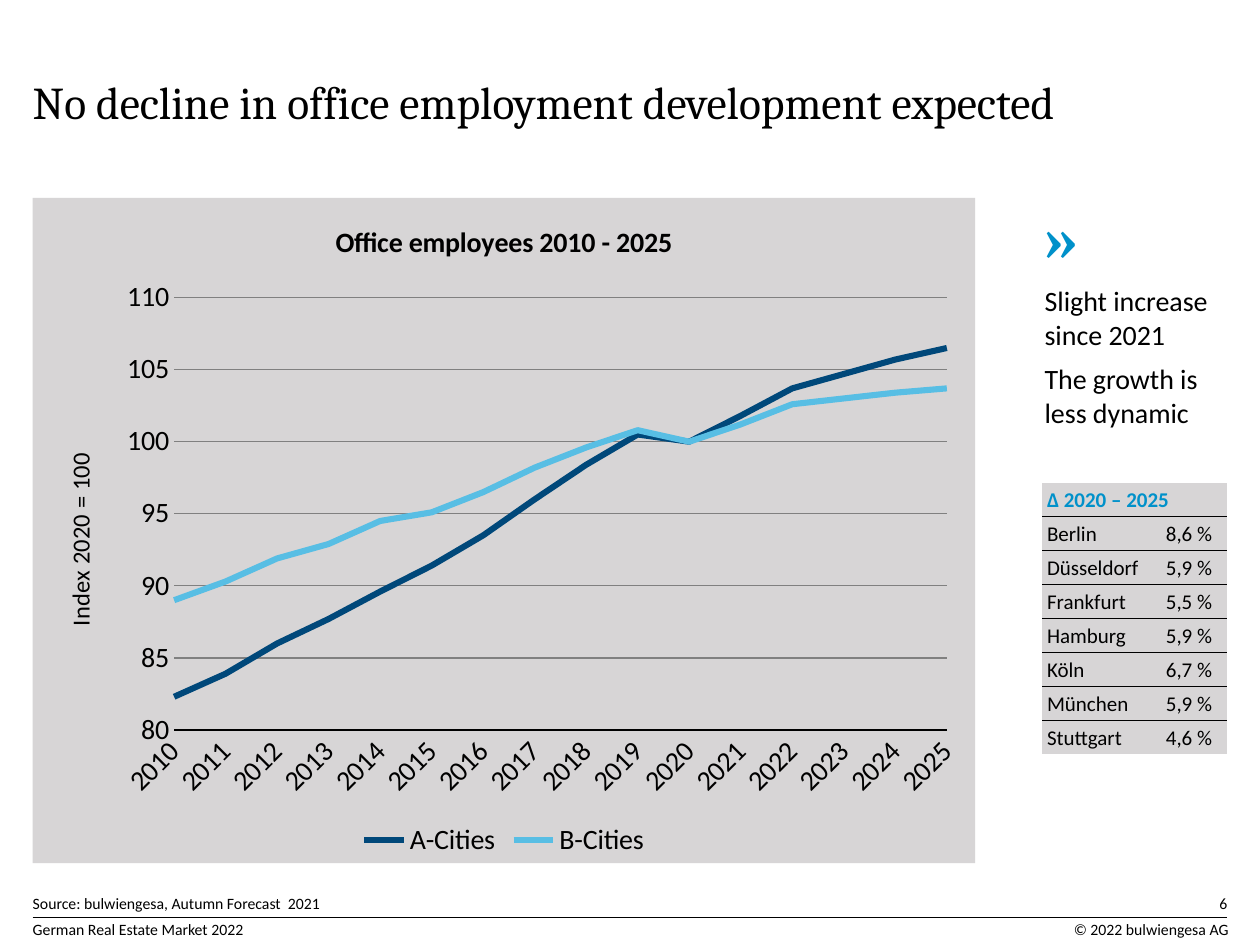
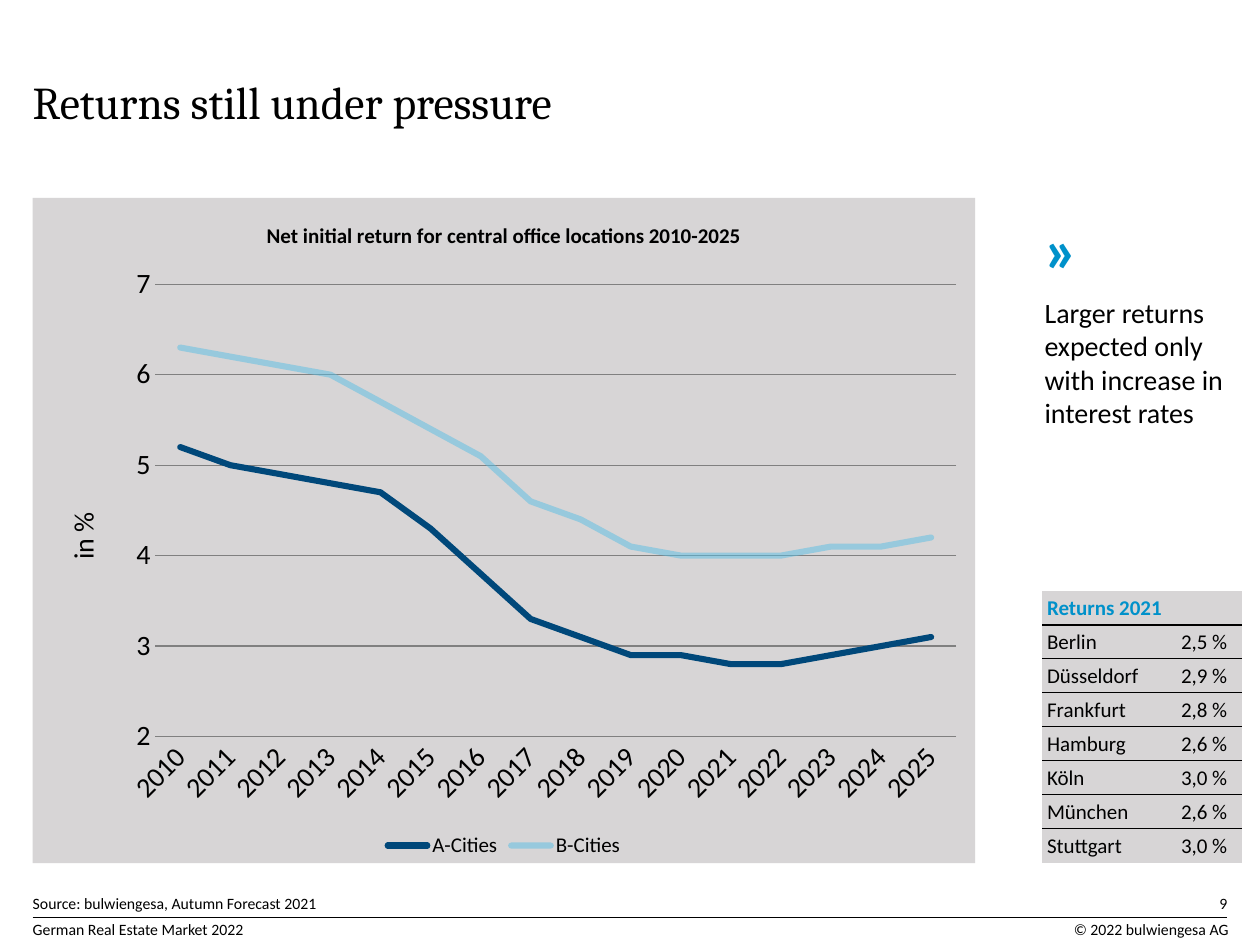
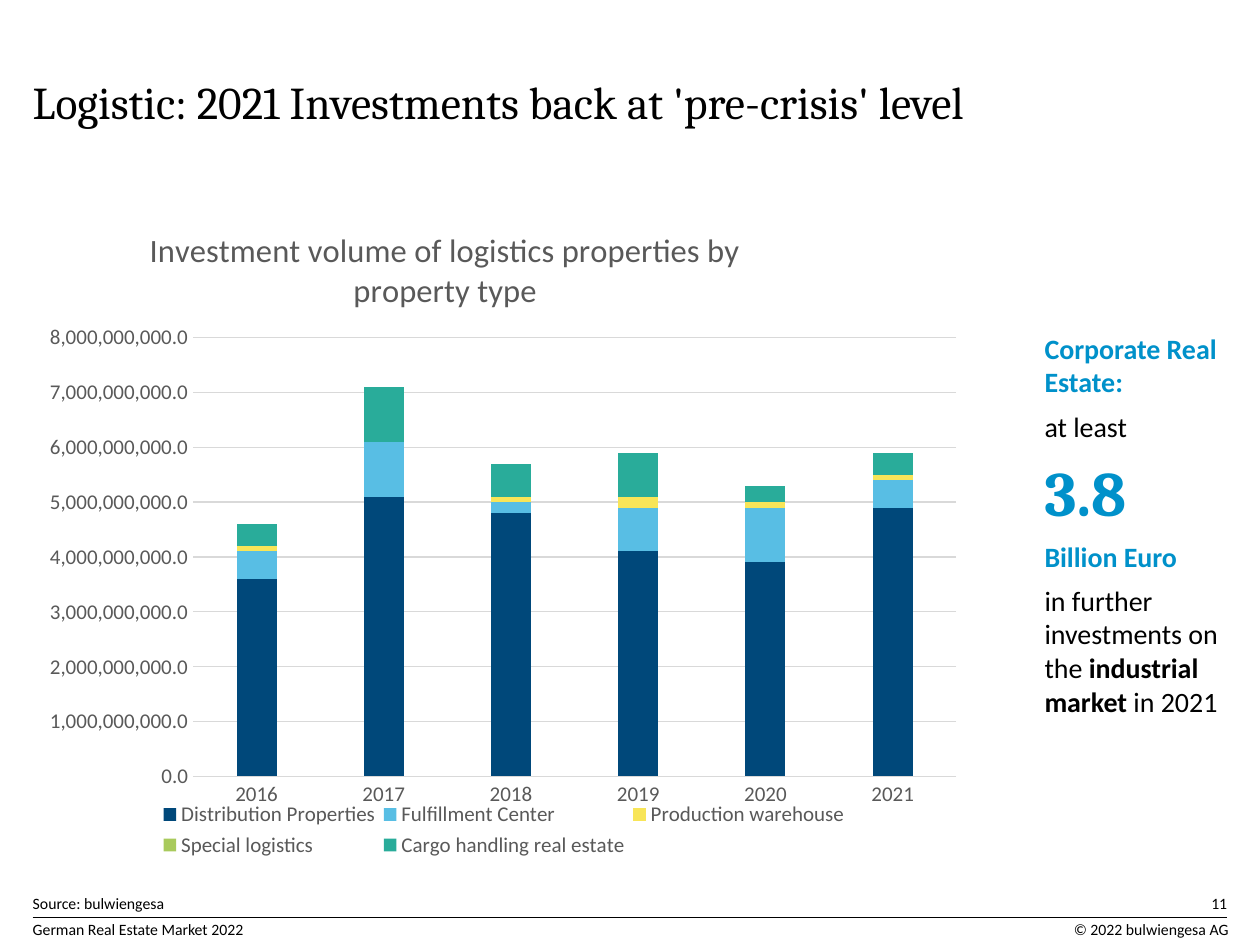
from dataclasses import dataclass
from typing import NamedTuple, Optional

from lxml import etree
from pptx import Presentation
from pptx.chart.data import CategoryChartData
from pptx.dml.color import RGBColor
from pptx.enum.chart import XL_CHART_TYPE, XL_LEGEND_POSITION, XL_TICK_MARK
from pptx.enum.shapes import MSO_CONNECTOR
from pptx.enum.text import MSO_ANCHOR, MSO_AUTO_SIZE, PP_ALIGN
from pptx.oxml.ns import qn
from pptx.util import Inches, Pt

LINE, STACKED = XL_CHART_TYPE.LINE, XL_CHART_TYPE.COLUMN_STACKED
BOTTOM = XL_LEGEND_POSITION.BOTTOM
NO_TICK = XL_TICK_MARK.NONE
LEFT, RIGHT = PP_ALIGN.LEFT, PP_ALIGN.RIGHT
TOP, MIDDLE, LOW = MSO_ANCHOR.TOP, MSO_ANCHOR.MIDDLE, MSO_ANCHOR.BOTTOM
FIXED = MSO_AUTO_SIZE.NONE
STRAIGHT = MSO_CONNECTOR.STRAIGHT

# Shared look
BLACK = RGBColor(0x00, 0x00, 0x00)
ACCENT = RGBColor(0x00, 0x91, 0xCA)
PANEL = RGBColor(0xD7, 0xD5, 0xD6)
NAVY = RGBColor(0x00, 0x48, 0x7A)
SKY = RGBColor(0x58, 0xBE, 0xE4)
YELLOW = RGBColor(0xF8, 0xE5, 0x58)
GREEN = RGBColor(0xA9, 0xCA, 0x5C)
TEAL = RGBColor(0x29, 0xAC, 0x9A)
GREY = RGBColor(0x80, 0x80, 0x80)
DARK_GREY = RGBColor(0x59, 0x59, 0x59)
PALE_GREY = RGBColor(0xD9, 0xD9, 0xD9)
BODY_FONT, HEAD_FONT = "Calibri", "Cambria"

LEFT_EDGE, RIGHT_EDGE = 0.26, 9.74
RULE_Y = 7.28
CITIES = ("Berlin", "Düsseldorf", "Frankfurt", "Hamburg", "Köln", "München", "Stuttgart")
YEARS = [str(year) for year in range(2010, 2026)]
ROW_HEIGHT = 0.27


class Box(NamedTuple):
    left: float
    top: float
    width: float
    height: float

    def inches(self) -> tuple:
        return tuple(Inches(value) for value in self)


CHART_BOX = Box(LEFT_EDGE, 1.57, 7.48, 5.28)


class Span(NamedTuple):
    text: str
    size: float = 16
    color: RGBColor = BLACK
    bold: bool = False
    font: str = BODY_FONT


class Series(NamedTuple):
    name: str
    values: tuple
    color: RGBColor
    opacity: int = 100


@dataclass
class ChartPlan:
    kind: XL_CHART_TYPE
    title: Span
    categories: list
    series: list
    plot_area: Box  # fractions of the chart
    low: float
    high: float
    step: float
    number_format: str
    label_size: float
    legend_size: float
    text_color: RGBColor
    axis_color: RGBColor
    grid_color: RGBColor
    fill: Optional[RGBColor] = None
    axis_title: Optional[Span] = None
    on_tick: bool = False
    round_lines: bool = False
    title_spot: Optional[tuple] = None
    legend_area: Optional[Box] = None


@dataclass
class CityTable:
    heading: str
    values: tuple
    left: float
    top: float
    columns: tuple


@dataclass
class SlidePlan:
    number: int
    title: str
    source: str
    chart: ChartPlan
    message: list
    message_box: Box
    table: Optional[CityTable] = None


# Text
def style(font, span: Span) -> None:
    font.name, font.size, font.bold = span.font, Pt(span.size), span.bold
    font.color.rgb = span.color


def write(shape, box: Box, lines: list, align=LEFT, anchor=TOP, wrap=True, gap=0) -> None:
    shape.left, shape.top, shape.width, shape.height = box.inches()
    frame = shape.text_frame
    frame.auto_size, frame.word_wrap, frame.vertical_anchor = FIXED, wrap, anchor
    frame.margin_left = frame.margin_top = frame.margin_right = frame.margin_bottom = 0
    for index, spans in enumerate(lines):
        paragraph = frame.paragraphs[0] if index == 0 else frame.add_paragraph()
        properties = paragraph._p.get_or_add_pPr()
        properties.set("marL", "0")
        properties.set("indent", "0")
        etree.SubElement(properties, qn("a:buNone"))
        paragraph.alignment = align
        paragraph.space_before = Pt(gap if index else 0)
        for span in spans:
            run = paragraph.add_run()
            run.text = span.text
            style(run.font, span)


def add_footer(slide, number: int) -> None:
    rule = slide.shapes.add_connector(
        STRAIGHT, Inches(LEFT_EDGE), Inches(RULE_Y), Inches(RIGHT_EDGE), Inches(RULE_Y))
    rule.line.color.rgb, rule.line.width = BLACK, Pt(0.4)
    etree.SubElement(rule._element.spPr, qn("a:effectLst"))
    for text, box, align in (
        ("German Real Estate Market 2022", Box(LEFT_EDGE, 7.3, 6.69, 0.15), LEFT),
        ("© 2022 bulwiengesa AG", Box(7.19, 7.3, 2.56, 0.15), RIGHT),
        (str(number), Box(9.15, 7.09, 0.59, 0.15), RIGHT),
    ):
        write(slide.shapes.add_textbox(0, 0, 0, 0), box, [[Span(text, 9)]], align)


# Charts
def set_layout(owner, sizes: tuple, inner: bool = False) -> None:
    old = owner.find(qn("c:layout"))
    if old is not None:
        owner.remove(old)
    layout = etree.Element(qn("c:layout"))
    manual = etree.SubElement(layout, qn("c:manualLayout"))
    if inner:
        etree.SubElement(manual, qn("c:layoutTarget")).set("val", "inner")
    for tag in ("xMode", "yMode"):
        etree.SubElement(manual, qn("c:" + tag)).set("val", "edge")
    for tag, value in zip("xywh", sizes):
        etree.SubElement(manual, qn("c:" + tag)).set("val", str(value))
    before = owner.find(qn("c:tx"))
    if before is None:
        before = owner.find(qn("c:legendPos"))
    if before is None:
        owner.insert(0, layout)
    else:
        before.addnext(layout)


def write_title(owner, span: Span) -> None:
    frame = owner.text_frame
    frame.text = span.text
    for paragraph in frame.paragraphs:
        style(paragraph.font, span)
        for run in paragraph.runs:
            style(run.font, span)


def set_crossing(value_axis, on_tick: bool) -> None:
    element = value_axis._element
    crossing = element.find(qn("c:crossBetween"))
    if crossing is None:
        crossing = etree.Element(qn("c:crossBetween"))
        before = element.find(qn("c:crosses"))
        if before is None:
            before = element.find(qn("c:crossAx"))
        before.addnext(crossing)
    crossing.set("val", "midCat" if on_tick else "between")


def style_axes(chart, plan: ChartPlan) -> None:
    categories, values = chart.category_axis, chart.value_axis
    for axis in (categories, values):
        axis.major_tick_mark = axis.minor_tick_mark = NO_TICK
        style(axis.tick_labels.font, Span("", plan.label_size, plan.text_color))
    categories.format.line.color.rgb = plan.axis_color
    categories.format.line.width = Pt(0.75)
    values.format.line.fill.background()
    values.minimum_scale, values.maximum_scale = plan.low, plan.high
    values.major_unit = plan.step
    values.tick_labels.number_format = plan.number_format
    values.tick_labels.number_format_is_linked = False
    values.has_major_gridlines = True
    values.major_gridlines.format.line.color.rgb = plan.grid_color
    values.major_gridlines.format.line.width = Pt(0.75)
    if plan.axis_title:
        write_title(values.axis_title, plan.axis_title)
    if plan.kind == LINE:
        labels = categories._element.find(qn("c:txPr"))
        labels.find(qn("a:bodyPr")).set("rot", "-2700000")
    set_crossing(values, plan.on_tick)


def style_series(chart, plan: ChartPlan) -> None:
    plot = chart.plots[0]
    plot.vary_by_categories = False
    if plan.kind == STACKED:
        plot.gap_width, plot.overlap = 219, 100
    for drawn, series in zip(plot.series, plan.series):
        if plan.kind == STACKED:
            drawn.format.fill.solid()
            drawn.format.fill.fore_color.rgb = series.color
            continue
        drawn.smooth = False
        line = drawn.format.line
        line.color.rgb, line.width = series.color, Pt(3.5)
        outline = drawn._element.find(qn("c:spPr")).find(qn("a:ln"))
        if plan.round_lines:
            outline.set("cap", "rnd")
        if series.opacity < 100:
            color = outline.find(".//" + qn("a:srgbClr"))
            etree.SubElement(color, qn("a:alpha")).set("val", str(series.opacity * 1000))


def add_chart(slide, plan: ChartPlan) -> None:
    data = CategoryChartData()
    data.categories = plan.categories
    for series in plan.series:
        data.add_series(series.name, series.values)
    chart = slide.shapes.add_chart(plan.kind, *CHART_BOX.inches(), data).chart
    style(chart.font, Span("", plan.legend_size, plan.text_color))
    chart.has_title = True
    write_title(chart.chart_title, plan.title)
    chart.has_legend = True
    chart.legend.position, chart.legend.include_in_layout = BOTTOM, False
    style(chart.legend.font, Span("", plan.legend_size, plan.text_color))
    style_axes(chart, plan)
    style_series(chart, plan)
    body = chart._chartSpace.find(qn("c:chart"))
    set_layout(body.find(qn("c:plotArea")), plan.plot_area, inner=True)
    if plan.title_spot:
        set_layout(body.find(qn("c:title")), plan.title_spot)
    if plan.legend_area:
        set_layout(body.find(qn("c:legend")), plan.legend_area)
    # Chart background
    background = etree.Element(qn("c:spPr"))
    if plan.fill is None:
        etree.SubElement(background, qn("a:noFill"))
    else:
        solid = etree.SubElement(background, qn("a:solidFill"))
        etree.SubElement(solid, qn("a:srgbClr")).set("val", str(plan.fill))
    etree.SubElement(etree.SubElement(background, qn("a:ln")), qn("a:noFill"))
    body.addnext(background)


# Tables
def set_borders(cell, above: bool, below: bool) -> None:
    properties = cell._tc.get_or_add_tcPr()
    sides = (("lnL", False), ("lnR", False), ("lnT", above), ("lnB", below))
    for index, (side, visible) in enumerate(sides):
        border = etree.Element(qn("a:" + side))
        if visible:
            border.set("w", str(int(Pt(0.75))))
            solid = etree.SubElement(border, qn("a:solidFill"))
            etree.SubElement(solid, qn("a:srgbClr")).set("val", str(BLACK))
        else:
            etree.SubElement(border, qn("a:noFill"))
        properties.insert(index, border)


def add_city_table(slide, plan: CityTable) -> None:
    rows = [(plan.heading, "")] + list(zip(CITIES, plan.values))
    box = Box(plan.left, plan.top, sum(plan.columns), ROW_HEIGHT * len(rows))
    table = slide.shapes.add_table(len(rows), 2, *box.inches()).table
    table.first_row = table.horz_banding = False
    for column, width in zip(table.columns, plan.columns):
        column.width = Inches(width)
    for y, row in enumerate(rows):
        table.rows[y].height = Inches(ROW_HEIGHT)
        for x, text in enumerate(row):
            cell = table.cell(y, x)
            cell.margin_left, cell.margin_top, cell.margin_bottom = Inches(0.04), Inches(0.01), 0
            cell.margin_right = Inches(0.12 if x else 0.01)
            cell.vertical_anchor = MIDDLE
            cell.fill.solid()
            cell.fill.fore_color.rgb = PANEL
            set_borders(cell, above=y > 0, below=y < len(rows) - 1)
            paragraph = cell.text_frame.paragraphs[0]
            paragraph.text = text
            paragraph.alignment = RIGHT if x else LEFT
            style(paragraph.font, Span("", 12))
            for run in paragraph.runs:
                style(run.font, Span(text, 12, BLACK if y else ACCENT, y == 0))
    table.cell(0, 0).merge(table.cell(0, 1))


def add_slide(deck, plan: SlidePlan) -> None:
    slide = deck.slides.add_slide(deck.slide_layouts[3])  # title and two bodies
    title, message, source = slide.placeholders
    write(title, Box(LEFT_EDGE, 0.59, 9.49, 0.44), [[Span(plan.title, 26, font=HEAD_FONT)]])
    write(message, plan.message_box, plan.message, gap=6)
    write(source, Box(LEFT_EDGE, 7.09, 7.48, 0.15), [[Span(plan.source, 9)]], anchor=LOW, wrap=False)
    add_chart(slide, plan.chart)
    if plan.table:
        add_city_table(slide, plan.table)
    add_footer(slide, plan.number)


# Content
EMPLOYMENT = SlidePlan(
    6, "No decline in office employment development expected",
    "Source: bulwiengesa, Autumn Forecast  2021",
    ChartPlan(
        LINE, Span("Office employees 2010 - 2025", 16, bold=True), YEARS,
        [Series("A-Cities", (82.3, 83.9, 86, 87.7, 89.6, 91.4, 93.5, 96, 98.4, 100.5, 100,
                             101.8, 103.7, 104.7, 105.7, 106.5), NAVY),
         Series("B-Cities", (89, 90.3, 91.9, 92.9, 94.5, 95.1, 96.5, 98.2, 99.6, 100.8, 100,
                             101.2, 102.6, 103, 103.4, 103.7), SKY)],
        Box(0.15, 0.15, 0.82, 0.65), 80, 110, 5, "0", 16, 16, BLACK, BLACK, GREY,
        fill=PANEL, axis_title=Span("Index 2020 = 100", 14), on_tick=True),
    [[Span("»", 36, ACCENT, True, HEAD_FONT)],
     [Span("Slight increase since 2021")],
     [Span("The growth is less dynamic")]],
    Box(8.29, 1.57, 1.46, 5.28),
    CityTable("∆ 2020 – 2025", ("8,6 %", "5,9 %", "5,5 %", "5,9 %", "6,7 %", "5,9 %", "4,6 %"),
              8.27, 3.83, (0.82, 0.65)))

RETURNS = SlidePlan(
    9, "Returns still under pressure", "Source: bulwiengesa, Autumn Forecast 2021",
    ChartPlan(
        LINE, Span("Net initial return for central office locations 2010-2025", 12, bold=True), YEARS,
        [Series("A-Cities", (5.2, 5, 4.9, 4.8, 4.7, 4.3, 3.8, 3.3, 3.1, 2.9, 2.9, 2.8, 2.8,
                             2.9, 3, 3.1), NAVY),
         Series("B-Cities", (6.3, 6.2, 6.1, 6, 5.7, 5.4, 5.1, 4.6, 4.4, 4.1, 4, 4, 4,
                             4.1, 4.1, 4.2), SKY, 50)],
        Box(0.13, 0.13, 0.85, 0.68), 2, 7, 1, "General", 16, 12, BLACK, GREY, GREY,
        fill=PANEL, axis_title=Span("in %", 16), round_lines=True),
    [[Span("»", 36, ACCENT, True)],
     [Span("Larger returns expected only with increase in interest rates")]],
    Box(8.29, 1.66, 1.59, 5.28),
    CityTable("Returns 2021", ("2,5 %", "2,9 %", "2,8 %", "2,6 %", "3,0 %", "2,6 %", "3,0 %"),
              8.27, 4.69, (0.89, 0.7)))

MILLION = 1_000_000
LOGISTICS = SlidePlan(
    11, "Logistic: 2021 Investments back at 'pre-crisis' level", "Source: bulwiengesa",
    ChartPlan(
        STACKED,
        Span("Investment volume of logistics properties by\nproperty type", 18.6, DARK_GREY),
        YEARS[6:12],
        [Series(name, tuple(value * MILLION for value in values), color) for name, values, color in (
            ("Distribution Properties", (3600, 5100, 4800, 4100, 3900, 4900), NAVY),
            ("Fulfillment Center", (500, 1000, 200, 800, 1000, 500), SKY),
            ("Production warehouse", (100, 0, 100, 200, 100, 100), YELLOW),
            ("Special logistics", (0, 0, 0, 0, 0, 0), GREEN),
            ("Cargo handling real estate", (400, 1000, 600, 800, 300, 400), TEAL))],
        Box(0.17, 0.21, 0.81, 0.66), 0, 8000 * MILLION, 1000 * MILLION, "#,##0.0", 12, 12,
        DARK_GREY, PALE_GREY, PALE_GREY,
        title_spot=(0.12, 0.04), legend_area=Box(0.13, 0.9, 0.74, 0.1)),
    [[Span("Corporate Real Estate:", color=ACCENT, bold=True)],
     [Span("at least")],
     [Span("3.8", 36, ACCENT, True, HEAD_FONT)],
     [Span("Billion Euro", color=ACCENT, bold=True)],
     [Span("in further investments on the "), Span("industrial market", bold=True),
      Span(" in 2021")]],
    Box(8.29, 2.63, 1.46, 4.22))


def main() -> None:
    deck = Presentation()
    deck.slide_width, deck.slide_height = Inches(10), Inches(7.5)
    for plan in (EMPLOYMENT, RETURNS, LOGISTICS):
        add_slide(deck, plan)
    deck.save("out.pptx")


if __name__ == "__main__":
    main()
